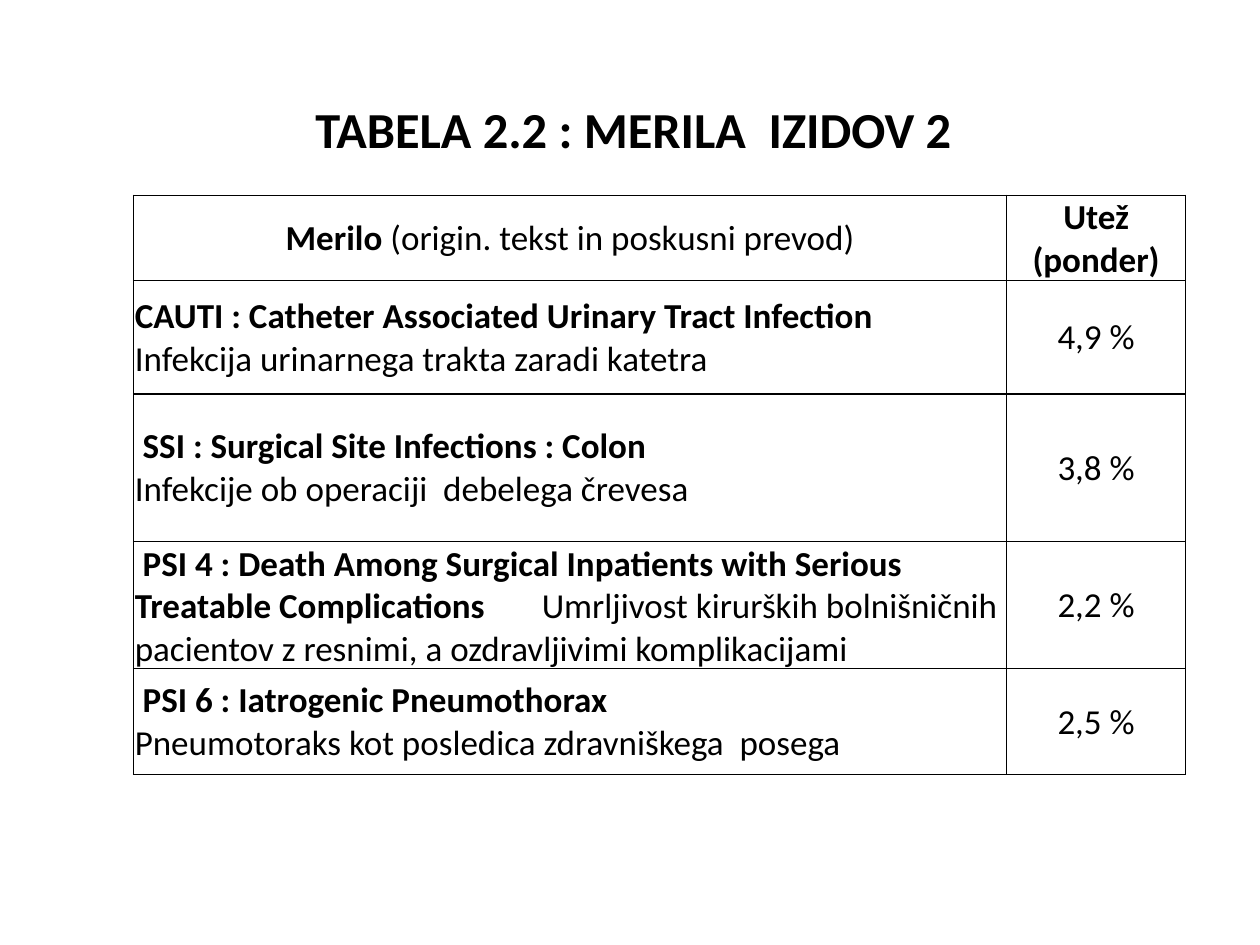
from dataclasses import dataclass

from lxml.etree import SubElement as Sub
from pptx import Presentation
from pptx.dml.color import RGBColor
from pptx.enum.text import MSO_ANCHOR as Anchor, PP_ALIGN as Align
from pptx.oxml.ns import qn
from pptx.util import Inches, Pt

INK = "000000"


@dataclass
class Row:
    """One measure: bold name, plain gloss, weight, height and the gap between name and gloss."""
    name: str
    gloss: str
    weight: str
    height: float
    gap: str = "\n"


ROWS = [
    Row("Merilo ", "(origin. tekst in poskusni prevod)", "Utež (ponder)", 0.51, ""),
    Row("CAUTI : Catheter Associated Urinary Tract Infection ",
        "Infekcija urinarnega trakta zaradi katetra", "4,9 %", 0.9),
    Row(" SSI : Surgical Site Infections : Colon",
        "Infekcije ob operaciji  debelega črevesa", "3,8 %", 1.17),
    Row(" PSI 4 : Death Among Surgical Inpatients with Serious Treatable Complications",
        "Umrljivost kirurških bolnišničnih pacientov z resnimi, a ozdravljivimi komplikacijami",
        "2,2 %", 1.01, "\t"),
    Row(" PSI 6 : Iatrogenic Pneumothorax ",
        "Pneumotoraks kot posledica zdravniškega  posega", "2,5 %", 0.84),
]


def color(code: str) -> RGBColor:
    """Turn a hex string into a colour."""
    return RGBColor.from_string(code)


def style(para, size: float, align: Align) -> None:
    """Set the shared font and the alignment of a paragraph."""
    para.alignment = align
    font = para.font
    font.name, font.size = "Calibri", Pt(size)
    font.color.rgb = color(INK)


def write(para, text: str, bold: bool) -> None:
    """Add one run of text."""
    run = para.add_run()
    run.text, run.font.bold = text, bold


def border(cell) -> None:
    """Draw a thin line on all four sides of a cell."""
    props = cell._tc.get_or_add_tcPr()
    for spot, side in enumerate(("a:lnL", "a:lnR", "a:lnT", "a:lnB")):
        line = Sub(props, qn(side), w=str(Pt(1)))
        fill = Sub(line, qn("a:solidFill"))
        Sub(fill, qn("a:srgbClr"), val=INK)
        props.insert(spot, line)


def tab(para, place: float) -> None:
    """Set a left tab stop."""
    stops = Sub(para._p.get_or_add_pPr(), qn("a:tabLst"))
    Sub(stops, qn("a:tab"), pos=str(Inches(place)), algn="l")
    para._p.pPr.insert(0, stops)


def setup(cell, align: Align):
    """Prepare a cell and return its paragraph."""
    cell.fill.background()
    border(cell)
    cell.vertical_anchor = Anchor.MIDDLE
    cell.margin_left = cell.margin_right = cell.margin_top = Inches(0.01)
    cell.margin_bottom = 0
    para = cell.text_frame.paragraphs[0]
    style(para, 20, align)
    return para


def title(slide, text: str) -> None:
    """Write the centred heading."""
    box = slide.shapes.add_textbox(Inches(0.43), Inches(0.75), Inches(9.29), Inches(0.54))
    frame = box.text_frame
    frame.word_wrap, frame.vertical_anchor = True, Anchor.MIDDLE
    para = frame.paragraphs[0]
    style(para, 28.8, Align.CENTER)
    write(para, text, True)


def grid(slide, rows: list[Row]) -> None:
    """Draw the table of measures and weights."""
    total = sum(row.height for row in rows)
    table = slide.shapes.add_table(len(rows), 2, Inches(1.06), Inches(1.55),
                                   Inches(8.35), Inches(total)).table
    table.first_row = table.horz_banding = False
    for col, width in zip(table.columns, (6.93, 1.42)):
        col.width = Inches(width)
    for num, row in enumerate(rows):
        head = num == 0
        table.rows[num].height = Inches(row.height)
        para = setup(table.cell(num, 0), Align.CENTER if head else Align.LEFT)
        write(para, row.name, True)
        if row.gap == "\n":
            para.add_line_break()
        elif row.gap == "\t":
            tab(para, 3.23)
            write(para, row.gap, False)
        write(para, row.gloss, False)
        write(setup(table.cell(num, 1), Align.CENTER), row.weight, head)


def main() -> None:
    """Build and save the slide."""
    deck = Presentation()
    deck.slide_width, deck.slide_height = Inches(10), Inches(7.5)
    slide = deck.slides.add_slide(deck.slide_layouts[6])
    title(slide, "TABELA 2.2 : MERILA  IZIDOV 2 ")
    grid(slide, ROWS)
    deck.save("out.pptx")


if __name__ == "__main__":
    main()
